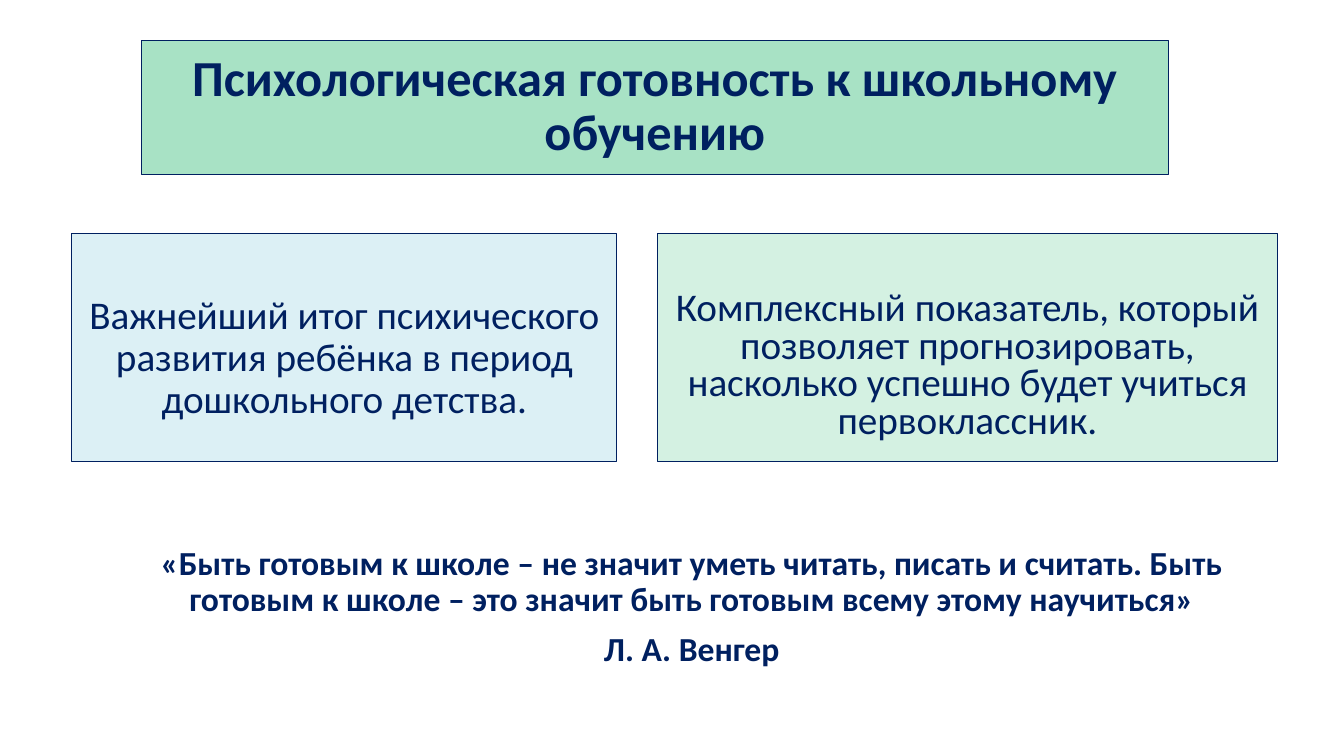
from pptx import Presentation
from pptx.dml.color import RGBColor
from pptx.enum.text import MSO_ANCHOR, MSO_AUTO_SIZE, PP_ALIGN
from pptx.util import Inches, Pt
from lxml.etree import SubElement
from pptx.oxml.ns import qn

NAVY = RGBColor(0x00, 0x20, 0x60)
MINT = RGBColor(0xA8, 0xE2, 0xC5)
SKY = RGBColor(0xDC, 0xF0, 0xF5)
PALE = RGBColor(0xD4, 0xF1, 0xE2)


def place(shape, box):
    shape.left, shape.top, shape.width, shape.height = map(Inches, box)


def paint(shape, color):
    shape.fill.solid()
    shape.fill.fore_color.rgb = color
    shape.line.color.rgb = NAVY
    shape.line.width = Pt(0.75)


def write(shape, lines, size, bold=False, ratio=0.9, inset=0.05, anchor=MSO_ANCHOR.TOP):
    frame = shape.text_frame
    frame.text = "\n".join(lines)
    frame.word_wrap = True
    frame.auto_size = MSO_AUTO_SIZE.NONE
    frame.vertical_anchor = anchor
    frame.margin_top = Inches(inset)
    for order, para in enumerate(frame.paragraphs):
        props = para._p.get_or_add_pPr()
        props.set("marL", "0")
        props.set("indent", "0")
        SubElement(props, qn("a:buNone"))
        para.alignment = PP_ALIGN.CENTER
        para.line_spacing = ratio
        para.space_before = Pt(10 if order else 0)
        para.font.name = "Calibri"
        para.font.size = Pt(size)
        para.font.bold = bold
        para.font.color.rgb = NAVY


def add_title(shape, box):
    place(shape, box)
    paint(shape, MINT)
    write(shape, ["Психологическая готовность к школьному обучению"],
          36, bold=True, anchor=MSO_ANCHOR.MIDDLE)


def add_card(shape, box, color, text, ratio, inset):
    place(shape, box)
    paint(shape, color)
    write(shape, [text], 28, ratio=ratio, inset=inset)


def add_quote(shape, box):
    place(shape, box)
    write(shape, [
        "«Быть готовым к школе – не значит уметь читать, писать и считать. "
        "Быть готовым к школе – это значит быть готовым всему этому научиться»",
        "Л. А. Венгер",
    ], 24, bold=True)


def main():
    deck = Presentation()
    deck.slide_width, deck.slide_height = Inches(13.33), Inches(7.5)
    slide = deck.slides.add_slide(deck.slide_layouts.get_by_name("Comparison"))
    holders = {p.placeholder_format.idx: p for p in slide.placeholders}
    add_title(holders[0], (1.4, 0.4, 10.19, 1.33))
    add_quote(holders[1], (1.3, 5.37, 11.12, 1.74))
    add_card(holders[2], (0.71, 2.32, 5.41, 2.26), SKY,
             "Важнейший итог психического развития ребёнка в период "
             "дошкольного детства.", 0.9, 0.61)
    add_card(holders[4], (6.52, 2.32, 6.15, 2.26), PALE,
             "Комплексный показатель, который позволяет прогнозировать, "
             "насколько успешно будет учиться первоклассник.", 0.8, 0.57)
    spare = holders[3]._element
    spare.getparent().remove(spare)
    deck.save("out.pptx")


if __name__ == "__main__":
    main()
